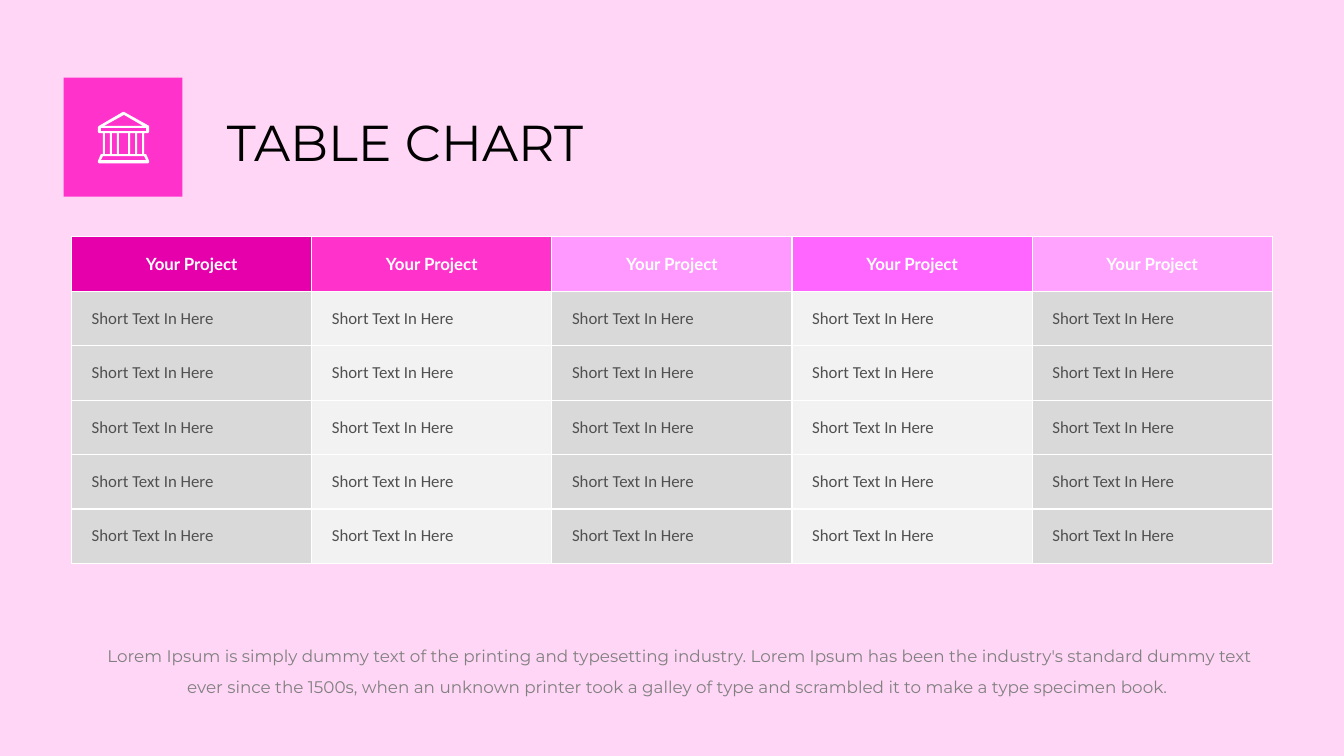
from lxml.etree import SubElement
from pptx import Presentation
from pptx.dml.color import RGBColor
from pptx.enum.shapes import MSO_SHAPE
from pptx.enum.text import MSO_ANCHOR, MSO_AUTO_SIZE, PP_ALIGN
from pptx.oxml.ns import qn
from pptx.util import Inches, Pt

BACKGROUND = RGBColor(0xFF, 0xD6, 0xF5)
HOT_PINK = RGBColor(0xFF, 0x33, 0xCC)
WHITE = RGBColor(0xFF, 0xFF, 0xFF)
BLACK = RGBColor(0x00, 0x00, 0x00)
CAPTION_GRAY = RGBColor(0x80, 0x80, 0x80)
CELL_TEXT = RGBColor(0x50, 0x50, 0x50)
COLUMN_FILLS = [RGBColor(0xD9, 0xD9, 0xD9), RGBColor(0xF2, 0xF2, 0xF2)]
HEADER_FILLS = [
    RGBColor(0xE5, 0x00, 0xAC),
    HOT_PINK,
    RGBColor(0xFF, 0x99, 0xFF),
    RGBColor(0xFF, 0x66, 0xFF),
    RGBColor(0xFF, 0xA3, 0xFF),
]
ROW_COUNT = 6


def add_span(para, text, font, size, color, bold=False):
    span = para.add_run()
    span.text = text
    span.font.name = font
    span.font.size = Pt(size)
    span.font.bold = bold
    span.font.color.rgb = color


def add_borders(cell):
    properties = cell._tc.get_or_add_tcPr()
    for index, side in enumerate(("lnL", "lnR", "lnT", "lnB")):
        line = properties.makeelement(qn(f"a:{side}"), {"w": str(Pt(1))})
        fill = SubElement(line, qn("a:solidFill"))
        SubElement(fill, qn("a:srgbClr"), val=str(WHITE))
        properties.insert(index, line)


deck = Presentation()
deck.slide_width = Inches(13.33)
deck.slide_height = Inches(7.5)
page = deck.slides.add_slide(deck.slide_layouts[5])
page.background.fill.solid()
page.background.fill.fore_color.rgb = BACKGROUND

# Title
title = page.shapes.title
title.left, title.top = Inches(2.15), Inches(1.04)
title.width, title.height = Inches(9.26), Inches(0.71)
frame = title.text_frame
frame.auto_size = MSO_AUTO_SIZE.NONE
frame.vertical_anchor = MSO_ANCHOR.BOTTOM
para = frame.paragraphs[0]
para.alignment = PP_ALIGN.LEFT
add_span(para, "TABLE CHART", "Montserrat", 36, BLACK)

# Icon tile
tile = page.shapes.add_shape(
    MSO_SHAPE.RECTANGLE, Inches(0.63), Inches(0.77), Inches(1.18), Inches(1.18))
tile.fill.solid()
tile.fill.fore_color.rgb = HOT_PINK

# Temple icon in hundredths of an inch: outline first, then the openings
outline = [(122, 111), (123, 111), (148, 125), (148, 131), (147, 132),
           (143, 132), (143, 153), (145, 153), (148, 160), (148, 161),
           (147, 162), (98, 162), (97, 161), (97, 160), (100, 153),
           (102, 153), (102, 132), (98, 132), (97, 131), (97, 126), (98, 125)]
openings = [
    [(123, 114), (142, 125), (103, 125)],
    [(100, 127), (145, 127), (145, 130), (100, 130)],
    [(102, 155), (143, 155), (145, 159), (100, 159)],
]
for left, right in [(104, 109), (111, 116), (118, 127), (129, 134), (136, 141)]:
    openings.append([(left, 132), (right, 132), (right, 153), (left, 153)])
builder = page.shapes.build_freeform(*outline[0], scale=Inches(0.01))
builder.add_line_segments(outline[1:], close=True)
for opening in openings:
    builder.move_to(*opening[0])
    builder.add_line_segments(opening[1:], close=True)
temple = builder.convert_to_shape()
temple.fill.solid()
temple.fill.fore_color.rgb = WHITE

for shape in (tile, temple):
    shape.line.fill.background()
    shape.shadow.inherit = False

# Project table
table = page.shapes.add_table(
    ROW_COUNT, len(HEADER_FILLS),
    Inches(0.71), Inches(2.35), Inches(11.91), Inches(3.24)).table
table.horz_banding = False
for row in range(ROW_COUNT):
    for column, header_fill in enumerate(HEADER_FILLS):
        cell = table.cell(row, column)
        cell.vertical_anchor = MSO_ANCHOR.MIDDLE
        cell.fill.solid()
        para = cell.text_frame.paragraphs[0]
        if row == 0:
            cell.fill.fore_color.rgb = header_fill
            para.alignment = PP_ALIGN.CENTER
            add_span(para, "Your Project", "Lato", 12, WHITE, bold=True)
        else:
            cell.fill.fore_color.rgb = COLUMN_FILLS[column % 2]
            cell.margin_left = Inches(0.2)
            add_span(para, "Short Text In Here", "Calibri", 12, CELL_TEXT)
        add_borders(cell)

# Caption
caption = page.shapes.add_textbox(
    Inches(0.78), Inches(6.26), Inches(11.93), Inches(0.67))
frame = caption.text_frame
frame.word_wrap = True
frame.auto_size = MSO_AUTO_SIZE.SHAPE_TO_FIT_TEXT
para = frame.paragraphs[0]
para.alignment = PP_ALIGN.CENTER
para.line_spacing = 1.5
add_span(
    para,
    "Lorem Ipsum is simply dummy text of the printing and typesetting industry. "
    "Lorem Ipsum has been the industry's standard dummy text ever since the 1500s, "
    "when an unknown printer took a galley of type and scrambled it to make a type "
    "specimen book. ",
    "Montserrat", 12, CAPTION_GRAY)

deck.save("out.pptx")
